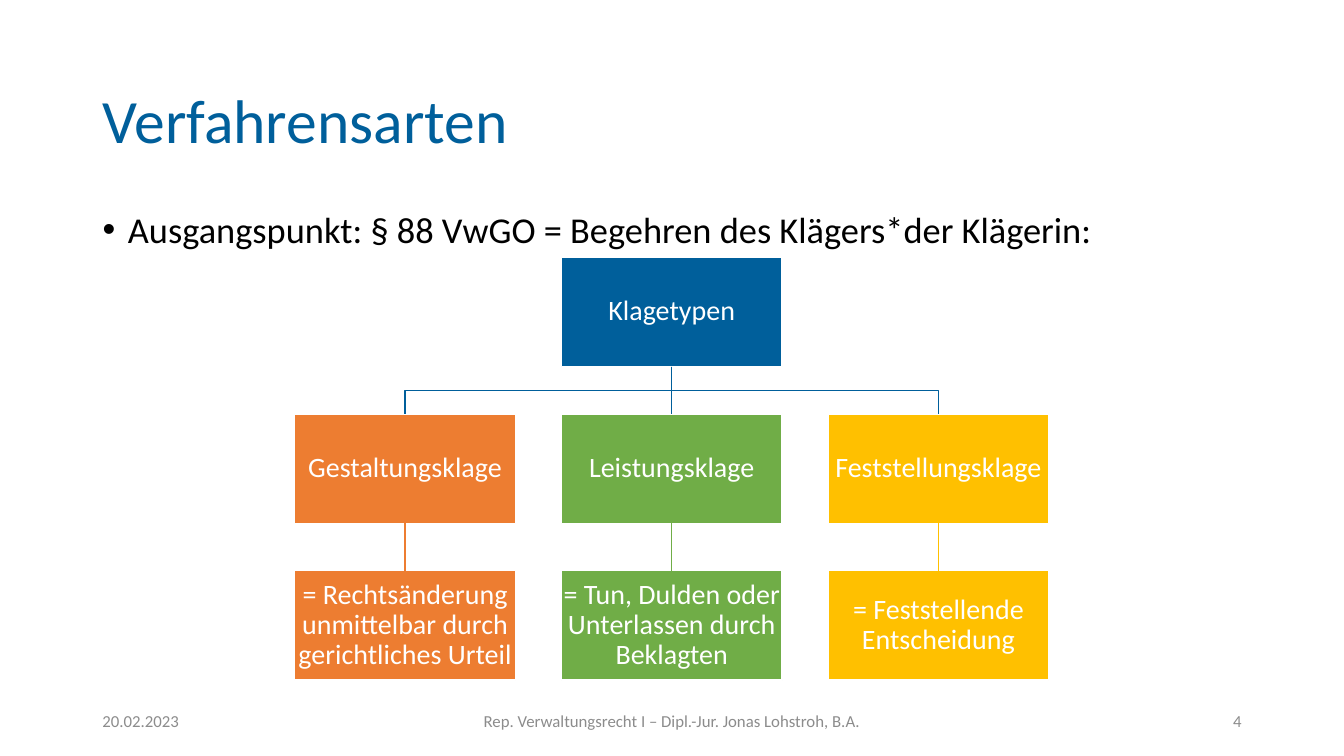
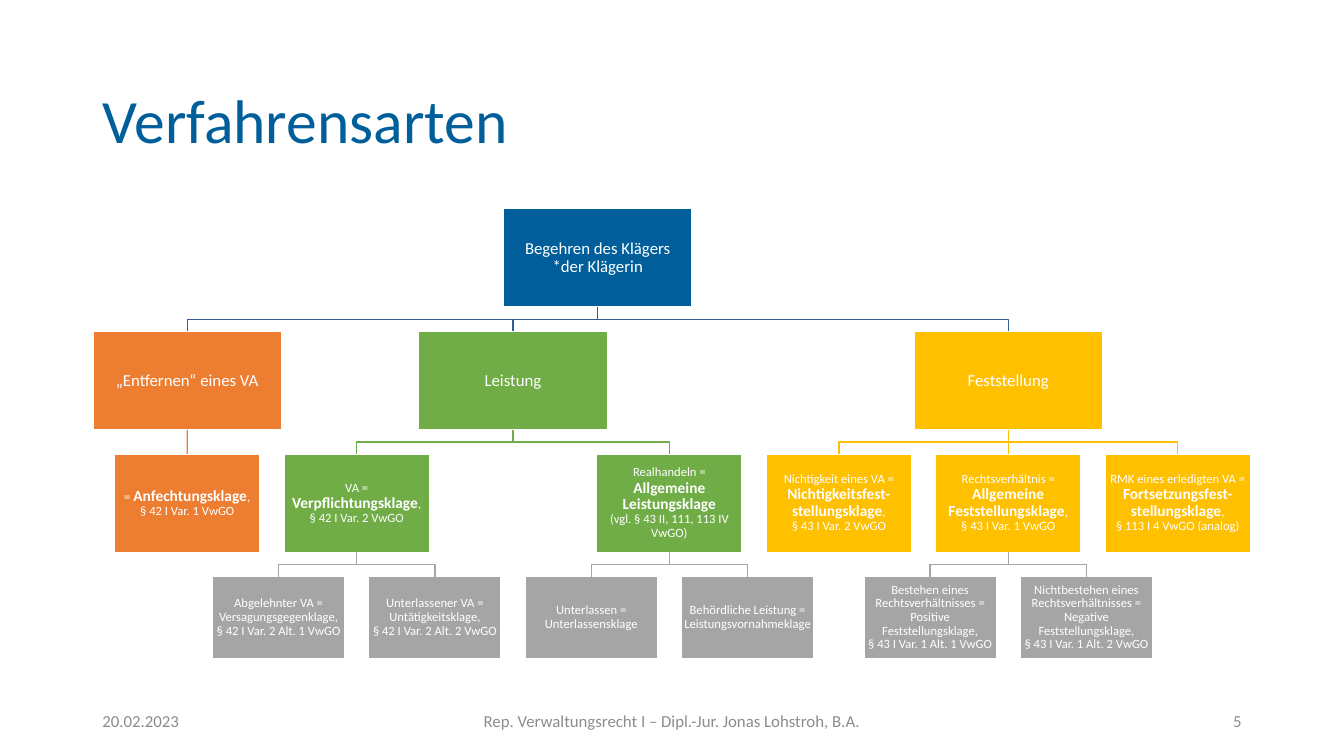
from dataclasses import dataclass, field

from lxml import etree
from pptx import Presentation
from pptx.dml.color import RGBColor
from pptx.enum.shapes import MSO_CONNECTOR, MSO_SHAPE
from pptx.enum.text import MSO_ANCHOR, MSO_AUTO_SIZE, PP_ALIGN
from pptx.oxml.ns import qn
from pptx.util import Cm, Pt

STRAIGHT, RECT = MSO_CONNECTOR.STRAIGHT, MSO_SHAPE.RECTANGLE
TOP, MIDDLE = MSO_ANCHOR.TOP, MSO_ANCHOR.MIDDLE
NO_FIT = MSO_AUTO_SIZE.NONE
LEFT, CENTER, RIGHT = PP_ALIGN.LEFT, PP_ALIGN.CENTER, PP_ALIGN.RIGHT
TOP_SITE, BOTTOM_SITE = 0, 2

BLUE, INDIGO, GREY = "005F9B", "365B9D", "A5A5A5"
ORANGE, GREEN, YELLOW = "ED7D31", "70AD47", "FFC000"
WHITE, BLACK, FOOTER_GREY = "FFFFFF", "000000", "8C8C8C"
FONT = "Calibri"

TITLE_BOX = (2.33, 1.55, 29.21, 3.12)
BODY_BOX = (2.33, 5.08, 29.21, 12.09)
FOOTER_TOP, FOOTER_HEIGHT = 17.65, 1.02
DATE = "20.02.2023"
FOOTER = "Rep. Verwaltungsrecht I – Dipl.-Jur. Jonas Lohstroh, B.A."


@dataclass
class Node:
    """A box of a tree; text between ** marks is bold."""
    text: str
    colour: str
    children: list = field(default_factory=list)
    x: float = 0


CLAIM_TYPES = Node("Klagetypen", BLUE, [
    Node("Gestaltungsklage", ORANGE, [
        Node("= Rechtsänderung unmittelbar durch gerichtliches Urteil", ORANGE)]),
    Node("Leistungsklage", GREEN, [
        Node("= Tun, Dulden oder Unterlassen durch Beklagten", GREEN)]),
    Node("Feststellungsklage", YELLOW, [
        Node("= Feststellende Entscheidung", YELLOW)]),
])

CLAIM_GOALS = Node("Begehren des Klägers\n*der Klägerin", BLUE, [
    Node("„Entfernen“ eines VA", ORANGE, [
        Node("= **Anfechtungsklage**,\n§ 42 I Var. 1 VwGO", ORANGE)]),
    Node("Leistung", GREEN, [
        Node("VA =\n**Verpflichtungsklage**,\n§ 42 I Var. 2 VwGO", GREEN, [
            Node("Abgelehnter VA = Versagungsgegenklage,\n"
                 "§ 42 I Var. 2 Alt. 1 VwGO", GREY),
            Node("Unterlassener VA = Untätigkeitsklage,\n"
                 "§ 42 I Var. 2 Alt. 2 VwGO", GREY)]),
        Node("Realhandeln =\n**Allgemeine Leistungsklage**\n"
             "(vgl. § 43 II, 111, 113 IV VwGO)", GREEN, [
                 Node("Unterlassen =\nUnterlassensklage", GREY),
                 Node("Behördliche Leistung = Leistungsvornahmeklage", GREY)])]),
    Node("Feststellung", YELLOW, [
        Node("Nichtigkeit eines VA = **Nichtigkeitsfest-stellungsklage**,\n"
             "§ 43 I Var. 2 VwGO", YELLOW),
        Node("Rechtsverhältnis =\n**Allgemeine Feststellungsklage**,\n"
             "§ 43 I Var. 1 VwGO", YELLOW, [
                 Node("Bestehen eines Rechtsverhältnisses =\n"
                      "Positive Feststellungsklage,\n"
                      "§ 43 I Var. 1 Alt. 1 VwGO", GREY),
                 Node("Nichtbestehen eines Rechtsverhältnisses =\n"
                      "Negative Feststellungsklage,\n"
                      "§ 43 I Var. 1 Alt. 2 VwGO", GREY)]),
        Node("RMK eines erledigten VA = **Fortsetzungsfest-stellungsklage**,\n"
             "§ 113 I 4 VwGO (analog)", YELLOW)]),
])

# Each level holds box width, box height and text size
SLIDES = [
    {"bullet": "Ausgangspunkt: § 88 VwGO = Begehren des Klägers*der Klägerin:",
     "number": 4, "tree": CLAIM_TYPES,
     "style": {"left": 7.43, "top": 6.48, "gap": 1.16, "row_gap": 1.19,
               "root_line": BLUE, "levels": [(5.56, 2.76, 20)] * 3}},
    {"bullet": None, "number": 5, "tree": CLAIM_GOALS,
     "style": {"left": 2.34, "top": 5.26, "gap": 0.6, "row_gap": 0.61,
               "root_line": INDIGO,
               "levels": [(4.76, 2.48, 12), (4.76, 2.48, 12),
                          (3.67, 2.48, 9), (3.34, 2.06, 9)]}},
]


def rgb(colour):
    return RGBColor.from_string(colour)


def set_attrs(obj, **values):
    for name, value in values.items():
        setattr(obj, name, value)


def place(sp, box):
    for name, value in zip(("left", "top", "width", "height"), box):
        setattr(sp, name, Cm(value))


def add_run(p, text, size, colour, bold=False):
    """Add text in one format, with a line break for each newline."""
    for i, line in enumerate(text.split("\n")):
        if i:
            p.add_line_break()
        if line:
            r = p.add_run()
            r.text = line
            set_attrs(r.font, name=FONT, size=Pt(size), bold=bold)
            r.font.color.rgb = rgb(colour)


def write(sp, text, size, colour, align=LEFT, anchor=MIDDLE, spacing=1.0):
    tf = sp.text_frame
    set_attrs(tf, word_wrap=True, auto_size=NO_FIT, vertical_anchor=anchor)
    p = tf.paragraphs[0]
    set_attrs(p, alignment=align, line_spacing=spacing)
    for i, part in enumerate(text.split("**")):
        bold = i % 2 == 1
        add_run(p, part, size + 2 * bold, colour, bold)
    return p


def add_base_slide(prs, bullet, number):
    """Add a slide with title, footer and an optional bullet."""
    s = prs.slides.add_slide(prs.slide_layouts[1 if bullet else 5])
    place(s.shapes.title, TITLE_BOX)
    write(s.shapes.title, "Verfahrensarten", 44, BLUE, spacing=0.9)
    if bullet:
        body = s.placeholders[1]
        place(body, BODY_BOX)
        p = write(body, bullet, 26, BLACK, anchor=TOP)
        p.space_before = Pt(10)
        indent = Cm(0.64)
        pPr = p._p.get_or_add_pPr()
        pPr.set("marL", str(indent))
        pPr.set("indent", str(-indent))
    for left, width, text, align in ((2.33, 7.62, DATE, LEFT),
                                     (11.22, 11.43, FOOTER, CENTER),
                                     (23.92, 7.62, str(number), RIGHT)):
        sp = s.shapes.add_textbox(0, 0, 0, 0)
        place(sp, (left, FOOTER_TOP, width, FOOTER_HEIGHT))
        write(sp, text, 12, FOOTER_GREY, align)
    return s


def shift(node, depth, dx, edges, style):
    """Move a subtree right and push the used edge of each row along."""
    node.x += dx
    right = node.x + style["levels"][depth][0] / 2 + style["gap"]
    edges[depth] = max(edges[depth], right)
    for child in node.children:
        shift(child, depth + 1, dx, edges, style)


def pack(node, depth, edges, style):
    """Centre each parent over its children, as far left as its row allows."""
    for child in node.children:
        pack(child, depth + 1, edges, style)
    lowest = edges[depth] + style["levels"][depth][0] / 2
    node.x = lowest
    if node.children:
        node.x = (node.children[0].x + node.children[-1].x) / 2
    shift(node, depth, max(0, lowest - node.x), edges, style)


def connect(shapes, parent, child, colour):
    """Join two boxes by a straight line or a line with two bends."""
    x1, y1 = parent.left + parent.width // 2, parent.top + parent.height
    x2, y2 = child.left + child.width // 2, child.top
    if abs(x1 - x2) < Cm(0.05):
        line = shapes.add_connector(STRAIGHT, x1, y1, x2, y2)
        line.begin_connect(parent, BOTTOM_SITE)
        line.end_connect(child, TOP_SITE)
        etree.SubElement(line._element.spPr, qn("a:effectLst"))
    else:
        middle = (y1 + y2) // 2
        outline = shapes.build_freeform(x1, y1)
        outline.add_line_segments([(x1, middle), (x2, middle), (x2, y2)],
                                  close=False)
        line = outline.convert_to_shape()
        line.fill.background()
        line.shadow.inherit = False
    line.line.color.rgb = rgb(colour)
    line.line.width = Pt(1)


def draw_tree(shapes, node, style, depth=0, top=None):
    """Draw a node and everything below it; return the node's box."""
    top = style["top"] if top is None else top
    width, height, size = style["levels"][depth]
    sp = shapes.add_shape(RECT, 0, 0, 0, 0)
    place(sp, (node.x - width / 2, top, width, height))
    sp.shadow.inherit = False
    sp.fill.solid()
    sp.fill.fore_color.rgb = rgb(node.colour)
    sp.line.color.rgb = rgb(WHITE)
    sp.line.width = Pt(1)
    inset = Cm(0.03)
    set_attrs(sp.text_frame, margin_left=inset, margin_right=inset,
              margin_top=inset, margin_bottom=inset)
    write(sp, node.text, size, WHITE, CENTER, spacing=0.9)
    for child in node.children:
        box = draw_tree(shapes, child, style, depth + 1,
                        top + height + style["row_gap"])
        connect(shapes, sp, box, child.colour if depth else style["root_line"])
    return sp


def main():
    prs = Presentation()
    prs.slide_width, prs.slide_height = Cm(33.87), Cm(19.05)
    for content in SLIDES:
        s = add_base_slide(prs, content["bullet"], content["number"])
        tree, style = content["tree"], content["style"]
        pack(tree, 0, [style["left"]] * len(style["levels"]), style)
        draw_tree(s.shapes, tree, style)
    prs.save("out.pptx")


if __name__ == "__main__":
    main()
